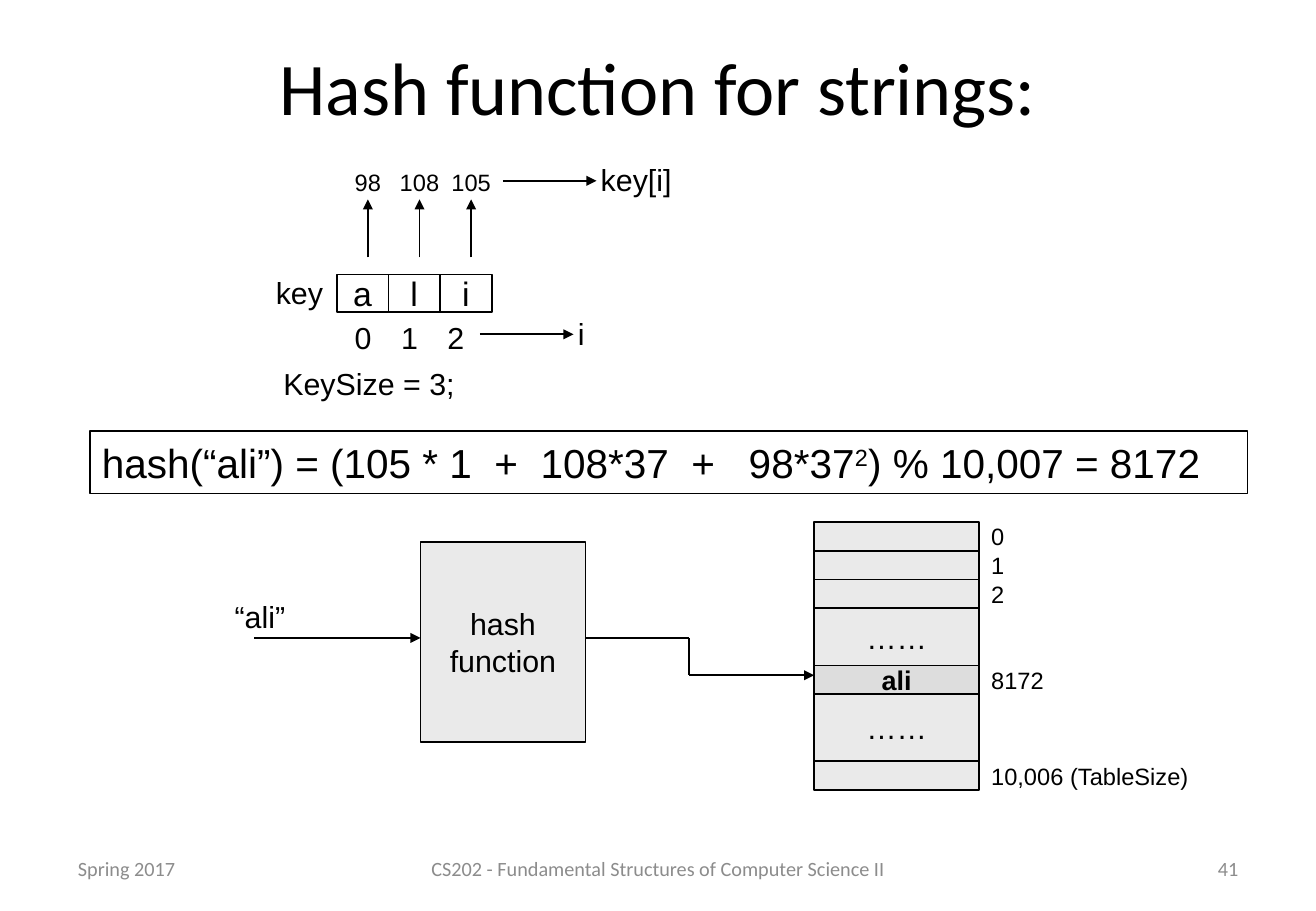
from itertools import pairwise

from lxml import etree
from pptx import Presentation
from pptx.dml.color import RGBColor
from pptx.enum.shapes import MSO_CONNECTOR, MSO_SHAPE
from pptx.enum.text import MSO_ANCHOR, PP_ALIGN
from pptx.oxml.ns import qn
from pptx.util import Cm, Pt

RECTANGLE = MSO_SHAPE.RECTANGLE
STRAIGHT = MSO_CONNECTOR.STRAIGHT
LEFT, CENTER, RIGHT = PP_ALIGN.LEFT, PP_ALIGN.CENTER, PP_ALIGN.RIGHT
MIDDLE = MSO_ANCHOR.MIDDLE

BLACK = "000000"
FOOTER_GREY = "8C8C8C"
LIGHT_GREY = "EAEAEA"
MID_GREY = "DDDDDD"


def color(hex_string):
    return RGBColor.from_string(hex_string)


def write(shape, text, size, align=CENTER, wrap=False, font="Arial",
          text_color=BLACK, bold=False):
    """Fill a shape with vertically centred text in one format."""
    frame = shape.text_frame
    frame.text = text
    frame.word_wrap = wrap
    frame.vertical_anchor = MIDDLE
    for paragraph in frame.paragraphs:
        paragraph.alignment = align
        for run in paragraph.runs:
            run.font.name = font
            run.font.size = Pt(size)
            run.font.bold = bold
            run.font.color.rgb = color(text_color)


def add_text(slide, text, left, top, width, height, size, **style):
    box = slide.shapes.add_textbox(Cm(left), Cm(top), Cm(width), Cm(height))
    write(box, text, size, **style)


def add_box(slide, left, top, width, height, fill=None):
    shape = slide.shapes.add_shape(RECTANGLE, Cm(left), Cm(top), Cm(width), Cm(height))
    shape.shadow.inherit = False
    if fill:
        shape.fill.solid()
        shape.fill.fore_color.rgb = color(fill)
    else:
        shape.fill.background()
    shape.line.color.rgb = color(BLACK)
    shape.line.width = Pt(1)
    return shape


def add_arrow(slide, *points):
    """Join the points with straight lines; the last one ends in an arrowhead."""
    for start, end in pairwise(points):
        line = slide.shapes.add_connector(STRAIGHT, *map(Cm, start + end))
        line.line.color.rgb = color(BLACK)
        line.line.width = Pt(1)
        if end == points[-1]:
            etree.SubElement(line.line._get_or_add_ln(), qn("a:tailEnd"), type="triangle")
        etree.SubElement(line._element.spPr, qn("a:effectLst"))


def add_key_diagram(slide, left, top):
    """Characters of the key, with their codes above and indexes below."""
    cell_width, cell_height = 1.08, 0.79
    cells_left, cells_top = left + 1.53, top + 2.51
    label_width, label_height = 1.8, 0.86

    for index, (letter, code) in enumerate(zip("ali", ("98", "108", "105"))):
        cell_left = cells_left + index * cell_width
        cell = add_box(slide, cell_left, cells_top, cell_width, cell_height)
        write(cell, letter, 20)
        arrow_x = cell_left + cell_width / 2 + 0.11
        add_arrow(slide, (arrow_x, top + 2.15), (arrow_x, top + 0.94))
        add_text(slide, code, arrow_x - label_width / 2, top + 0.15,
                 label_width, label_height, 14)
        index_x = cells_left + 0.55 + index * 0.97
        add_text(slide, str(index), index_x - label_width / 2, top + 3.3,
                 label_width, 1.04, 18)

    # Names of the parts
    for text, x, y, width in (("key", 0, 2.36, 1.5), ("KeySize = 3;", 0.14, 4.26, 4.13),
                              ("key[i]", 6.79, 0, 2), ("i", 6.32, 3.22, 0.64)):
        add_text(slide, text, left + x, top + y, width, 1.04, 18)
    for x, y in ((5, 0.55), (4.52, 3.76)):
        add_arrow(slide, (left + x, top + y), (left + x + 1.96, top + y))


def add_formula(slide, left, top, width, height):
    box = add_box(slide, left, top, width, height)
    write(box, "hash(“ali”) = (105 * 1  +  108*37  +   98*37", 24, align=LEFT, wrap=True)
    paragraph = box.text_frame.paragraphs[0]
    for text, baseline in (("2", "30000"), (") % 10,007 = 8172", "0")):
        run = paragraph.add_run()
        run.text = text
        run.font.name = "Arial"
        run.font.size = Pt(24)
        run.font.color.rgb = color(BLACK)
        run.font._element.set("baseline", baseline)


def add_hash_table(slide, left, top, width):
    """Stacked table rows with their indexes on the right."""
    rows = (("", "0", 0.6), ("", "1", 0.6), ("", "2", 0.6), ("……", "", 1.2),
            ("ali", "8172", 0.6), ("……", "", 1.4), ("", "10,006 (TableSize)", 0.6))
    for text, index, height in rows:
        found = text == "ali"
        row = add_box(slide, left, top, width, height, MID_GREY if found else LIGHT_GREY)
        if text:
            write(row, text, 16 if found else 18, bold=found)
        if index:
            add_text(slide, index, left + width, top + height / 2 - 0.43, 5, 0.86, 14,
                     align=LEFT, wrap=True)
        top += height


def add_hash_flow(slide, left, top):
    """The key goes through the hash function into the table."""
    box_left, box_width, box_height = left + 4.14, 3.45, 4.19
    box_right, table_left = box_left + box_width, left + 12.37
    key_y, row_y, bend_x = top + 2.42, top + 3.2, left + 9.75

    function = add_box(slide, box_left, top + 0.41, box_width, box_height, LIGHT_GREY)
    write(function, "hash\vfunction", 18)
    add_hash_table(slide, table_left, top, 3.45)
    add_text(slide, "“ali”", left, top + 1.45, 1.57, 1.04, 18)
    add_arrow(slide, (left + 0.66, key_y), (box_left, key_y))
    add_arrow(slide, (box_right, key_y), (bend_x, key_y), (bend_x, row_y),
              (table_left, row_y))


def add_footer(slide, left, top, width, height):
    side, middle = 6.42, 10.16
    parts = (("Spring 2017", left, side, LEFT),
             ("CS202 - Fundamental Structures of Computer Science II",
              left + (width - middle) / 2, middle, CENTER),
             ("41", left + width - side, side, RIGHT))
    for text, part_left, part_width, align in parts:
        add_text(slide, text, part_left, top, part_width, height, 12, align=align,
                 wrap=True, font="Calibri", text_color=FOOTER_GREY)


def main():
    presentation = Presentation()
    presentation.slide_width = Cm(27.51)
    presentation.slide_height = Cm(19.05)
    slide = presentation.slides.add_slide(presentation.slide_layouts[6])

    add_text(slide, "Hash function for strings:", 1.38, 0.64, 24.76, 2.33, 44,
             wrap=True, font="Calibri")
    add_key_diagram(slide, 5.51, 3.23)
    add_formula(slide, 1.88, 9.02, 24.2, 1.3)
    add_hash_flow(slide, 4.65, 10.92)
    add_footer(slide, 1.38, 17.65, 24.76, 1.02)
    presentation.save("out.pptx")


if __name__ == "__main__":
    main()
